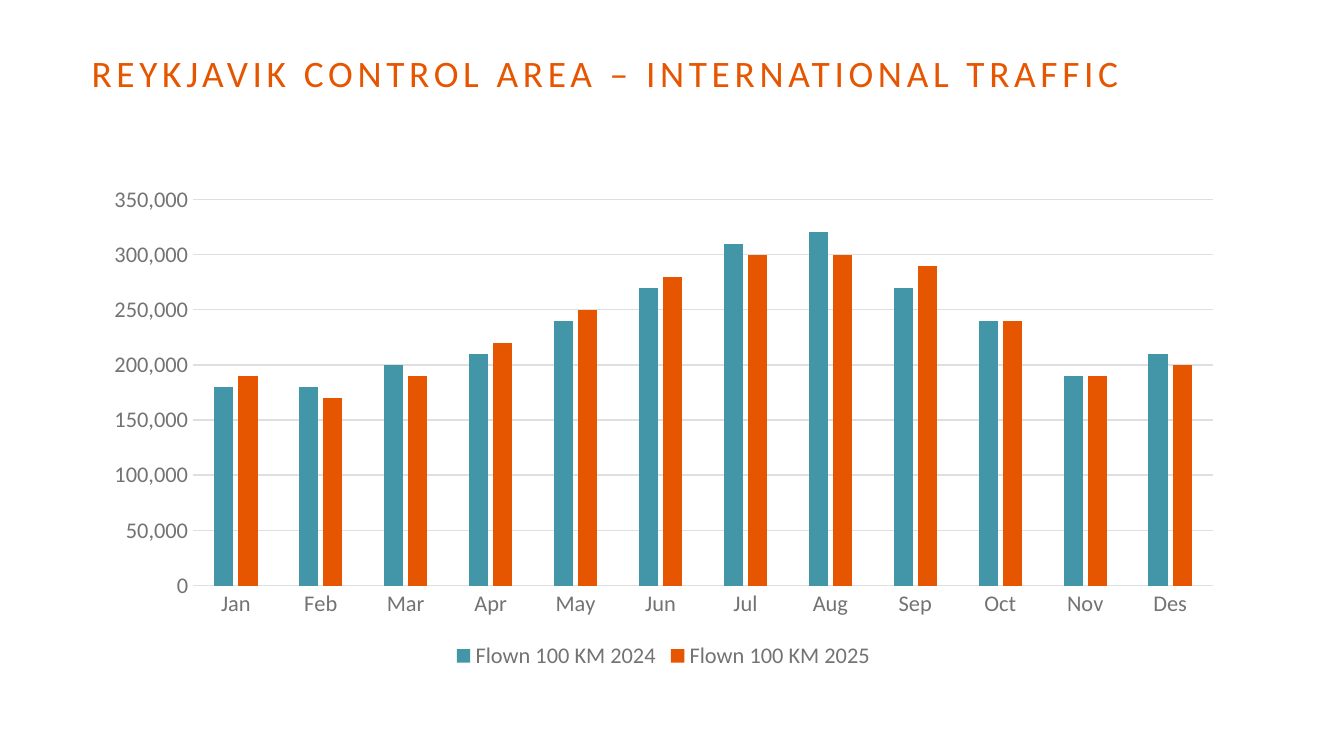
from dataclasses import dataclass

from pptx import Presentation
from pptx import util as u
from pptx.chart.data import CategoryChartData
from pptx.dml.color import RGBColor
from pptx.enum import chart as kinds, text


@dataclass(frozen=True)
class Theme:
    face: str = "Calibri"
    teal: str = "4396A7"
    orange: str = "E65500"
    dark: str = "272727"
    gray: str = "737373"
    rule: str = "DFDFDF"
    head: int = 20
    label: int = 12
    base: int = 10


theme = Theme()


def style(font, size, color):
    font.name = theme.face
    font.size = u.Pt(size)
    font.bold = False
    font.color.rgb = RGBColor.from_string(color)


def write(frame, words, size, color, lead, track):
    frame.word_wrap = True
    frame.auto_size = text.MSO_AUTO_SIZE.NONE
    frame.vertical_anchor = text.MSO_ANCHOR.MIDDLE
    frame.margin_left = frame.margin_right = 0
    frame.margin_top = frame.margin_bottom = 0
    para = frame.paragraphs[0]
    para.alignment = text.PP_ALIGN.LEFT
    para.line_spacing = u.Pt(lead)
    run = para.add_run()
    run.text = words
    style(run.font, size, color)
    # Letter spacing is stored in hundredths of a point
    run.font._element.set("spc", str(int(track * 100)))


deck = Presentation()
deck.slide_width, deck.slide_height = u.Cm(25.4), u.Cm(14.29)
slide = deck.slides.add_slide(deck.slide_layouts[5])
left = u.Cm(1.73)

# Title
title = slide.shapes.title
title.left, title.top = left, u.Cm(0.48)
title.width, title.height = u.Cm(21.11), u.Cm(1.7)
write(title.text_frame, "REYKJAVIK CONTROL AREA – INTERNATIONAL TRAFFIC",
      size=theme.head, color=theme.orange, lead=26, track=2.5)

# Monthly traffic, in thousands
months = "Jan Feb Mar Apr May Jun Jul Aug Sep Oct Nov Des".split()
flown = {
    2024: [180, 180, 200, 210, 240, 270, 310, 320, 270, 240, 190, 210],
    2025: [190, 170, 190, 220, 250, 280, 300, 300, 290, 240, 190, 200],
}
data = CategoryChartData(number_format="#,##0")
data.categories = months
for year, counts in flown.items():
    data.add_series(f"Flown 100 KM {year}", [n * 1000 for n in counts])

# Chart
chart = slide.shapes.add_chart(
    kinds.XL_CHART_TYPE.COLUMN_CLUSTERED, left, u.Cm(3.33),
    u.Cm(21.62), u.Cm(9.42), data).chart
chart.has_title = False
style(chart.font, theme.base, theme.dark)

# Columns
plot = chart.plots[0]
plot.gap_width, plot.overlap = 219, -27
plot.vary_by_categories = False
for series, color in zip(plot.series, (theme.teal, theme.orange)):
    series.format.fill.solid()
    series.format.fill.fore_color.rgb = RGBColor.from_string(color)
    series.invert_if_negative = False

# Axes and grid
months_axis, flown_axis = chart.category_axis, chart.value_axis
for axis in (months_axis, flown_axis):
    axis.major_tick_mark = axis.minor_tick_mark = kinds.XL_TICK_MARK.NONE
    style(axis.tick_labels.font, theme.label, theme.gray)
flown_axis.minimum_scale, flown_axis.maximum_scale = 0, 350000
flown_axis.major_unit = 50000
flown_axis.tick_labels.number_format = "#,##0"
flown_axis.tick_labels.number_format_is_linked = False
flown_axis.format.line.fill.background()
for line in (months_axis.format.line, flown_axis.major_gridlines.format.line):
    line.width = u.Pt(0.75)
    line.color.rgb = RGBColor.from_string(theme.rule)

# Legend
chart.has_legend = True
chart.legend.position = kinds.XL_LEGEND_POSITION.BOTTOM
chart.legend.include_in_layout = False
style(chart.legend.font, theme.label, theme.gray)

deck.save("out.pptx")
